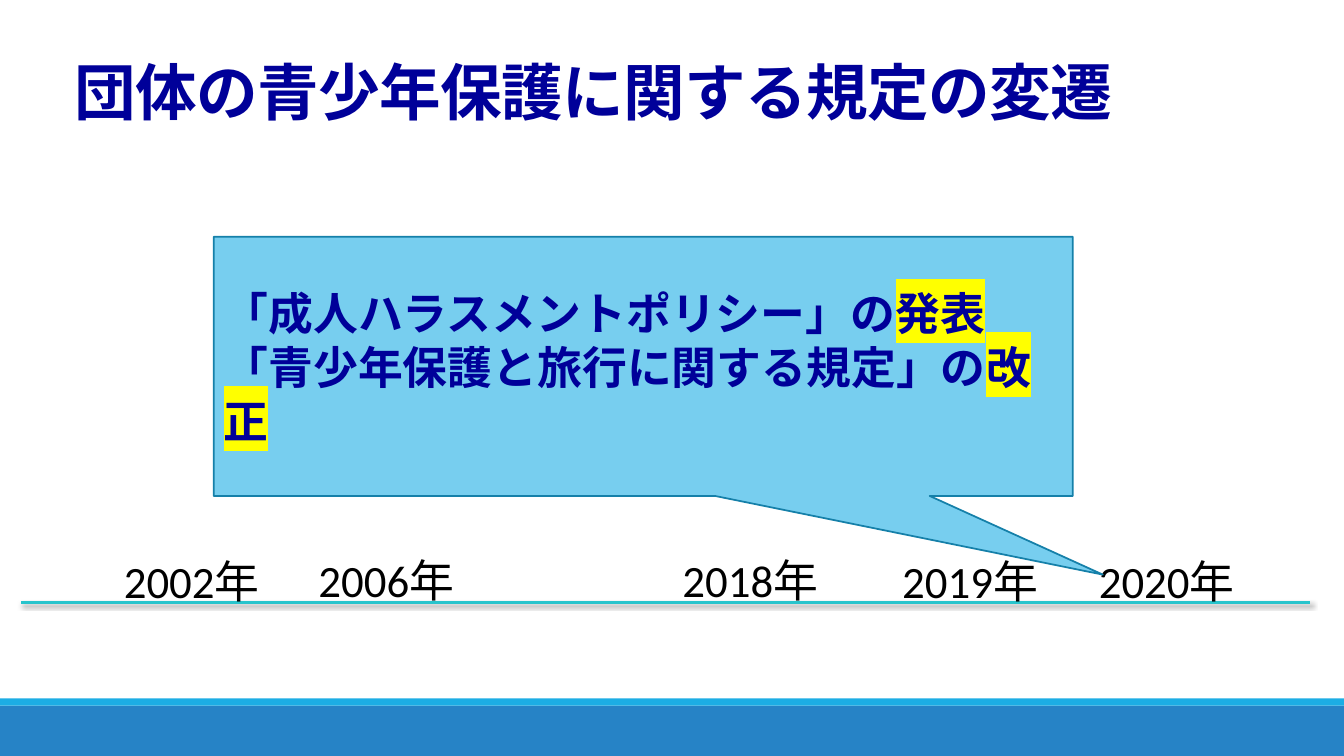
from lxml import etree
from pptx import Presentation
from pptx.dml.color import RGBColor
from pptx.enum.lang import MSO_LANGUAGE_ID as LANG
from pptx.enum.shapes import MSO_CONNECTOR, MSO_SHAPE
from pptx.enum.text import MSO_ANCHOR as ANCHOR, MSO_AUTO_SIZE as FIT, PP_ALIGN as ALIGN
from pptx.oxml.ns import qn
from pptx.util import Pt

PX = 9144  # 100 px to the inch
COLORS = {
    "navy": "000099", "black": "000000", "yellow": "FFFF00",
    "sky": "77CEEF", "sky_edge": "1580A9", "axis": "28C4CC",
    "footer": "2683C6", "footer_edge": "1CADE4",
}
YEARS = [("2002年", 113, 544), ("2006年", 306, 543), ("2018年", 667, 543),
         ("2019年", 885, 544), ("2020年", 1080, 544)]
POLICIES = [("「成人ハラスメントポリシー」の", "発表"),
            ("「青少年保護と旅行に関する規定」の", "改正")]


def rgb(name):
    return RGBColor.from_string(COLORS[name])


def add_color(parent, tag, name):
    """Append a DrawingML element of the given tag holding one sRGB colour."""
    el = etree.SubElement(parent, qn(tag))
    return el, etree.SubElement(el, qn("a:srgbClr"), val=COLORS[name])


class Deck:
    font = "Calibri"

    def __init__(self, width, height):
        self.prs = Presentation()
        self.prs.slide_width, self.prs.slide_height = width * PX, height * PX
        self.s = self.prs.slides.add_slide(self.prs.slide_layouts[5])

    def run(self, p, text, size=32, color="black", bold=False, highlight=None, spacing=None):
        r = p.add_run()
        r.text = text
        f = r.font
        f.name, f.size, f.bold = self.font, Pt(size), bold
        f.color.rgb = rgb(color)
        f.language_id = LANG.JAPANESE
        rpr = r._r.get_or_add_rPr()
        if spacing is not None:
            rpr.set("spc", str(round(spacing * 100)))
        if highlight:
            hl, _ = add_color(rpr, "a:highlight", highlight)
            rpr.find(qn("a:latin")).addprevious(hl)

    def title(self, text, x, y, w, h):
        sp = self.s.shapes.title
        sp.left, sp.top, sp.width, sp.height = (v * PX for v in (x, y, w, h))
        tf = sp.text_frame
        tf.auto_size, tf.vertical_anchor = FIT.NONE, ANCHOR.MIDDLE
        p = tf.paragraphs[0]
        p.alignment, p.line_spacing = ALIGN.LEFT, 0.9
        self.run(p, text, size=44, color="navy", bold=True, spacing=-0.5)

    def shape(self, kind, x, y, w, h, fill, line=None):
        sp = self.s.shapes.add_shape(kind, x * PX, y * PX, w * PX, h * PX)
        sp.shadow.inherit = False
        sp.fill.solid()
        sp.fill.fore_color.rgb = rgb(fill)
        if line:
            sp.line.color.rgb, sp.line.width = rgb(line), Pt(1.25)
        else:
            sp.line.fill.background()
        return sp

    def callout(self, lines, x, y, w, h, tip):
        sp = self.shape(MSO_SHAPE.RECTANGULAR_CALLOUT, x, y, w, h, "sky", "sky_edge")
        sp.adjustments[0], sp.adjustments[1] = tip
        tf = sp.text_frame
        tf.word_wrap, tf.vertical_anchor = True, ANCHOR.MIDDLE
        for i, (subject, action) in enumerate(lines):
            p = tf.add_paragraph() if i else tf.paragraphs[0]
            p.alignment = ALIGN.LEFT
            self.run(p, subject, color="navy", bold=True)
            self.run(p, action, color="navy", bold=True, highlight="yellow")

    def label(self, text, x, y, w=175, h=64):
        tf = self.s.shapes.add_textbox(x * PX, y * PX, w * PX, h * PX).text_frame
        tf.word_wrap, tf.auto_size = True, FIT.SHAPE_TO_FIT_TEXT
        self.run(tf.paragraphs[0], text)

    def axis(self, x1, x2, y):
        """Draw a horizontal time axis with a soft shadow."""
        cn = self.s.shapes.add_connector(MSO_CONNECTOR.STRAIGHT, x1 * PX, y * PX, x2 * PX, y * PX)
        cn.line.color.rgb, cn.line.width = rgb("axis"), Pt(2)
        effects = etree.SubElement(cn._element.spPr, qn("a:effectLst"))
        shadow, color = add_color(effects, "a:outerShdw", "black")
        for key, value in (("blurRad", Pt(3)), ("dist", Pt(2)), ("dir", 45 * 60000)):
            shadow.set(key, str(int(value)))
        etree.SubElement(color, qn("a:alpha"), val="60000")


def main():
    deck = Deck(1333, 750)
    deck.shape(MSO_SHAPE.RECTANGLE, 0, 700, 1333, 50, "footer")
    deck.shape(MSO_SHAPE.RECTANGLE, 0, 693, 1333, 7, "footer_edge")
    deck.axis(21, 1299, 598)
    for year, x, y in YEARS:
        deck.label(year, x, y)
    deck.callout(POLICIES, 212, 235, 852, 257, tip=(0.535, 0.804))
    deck.title("団体の青少年保護に関する規定の変遷", 64, 54, 1205, 82)
    deck.prs.save("out.pptx")


if __name__ == "__main__":
    main()
